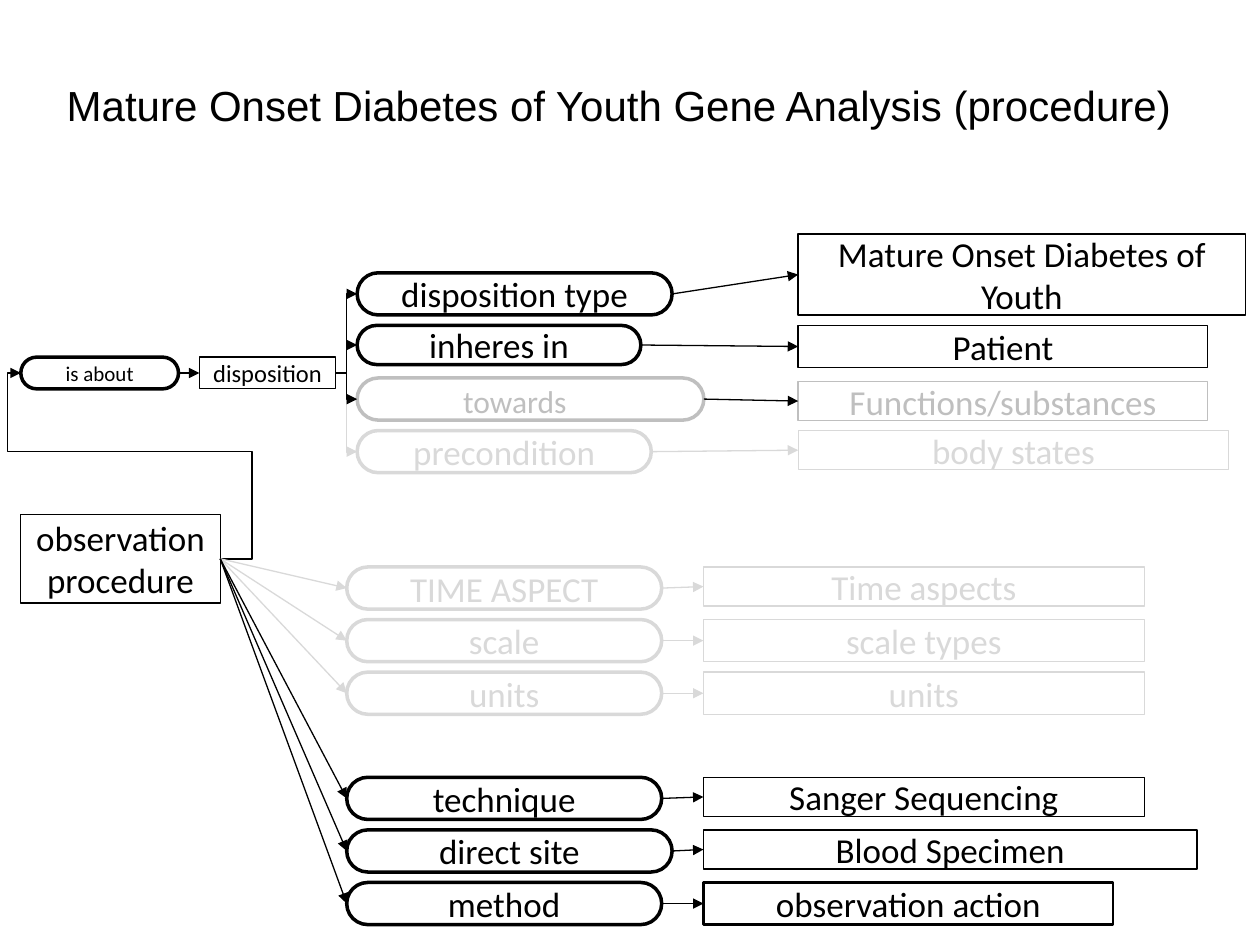
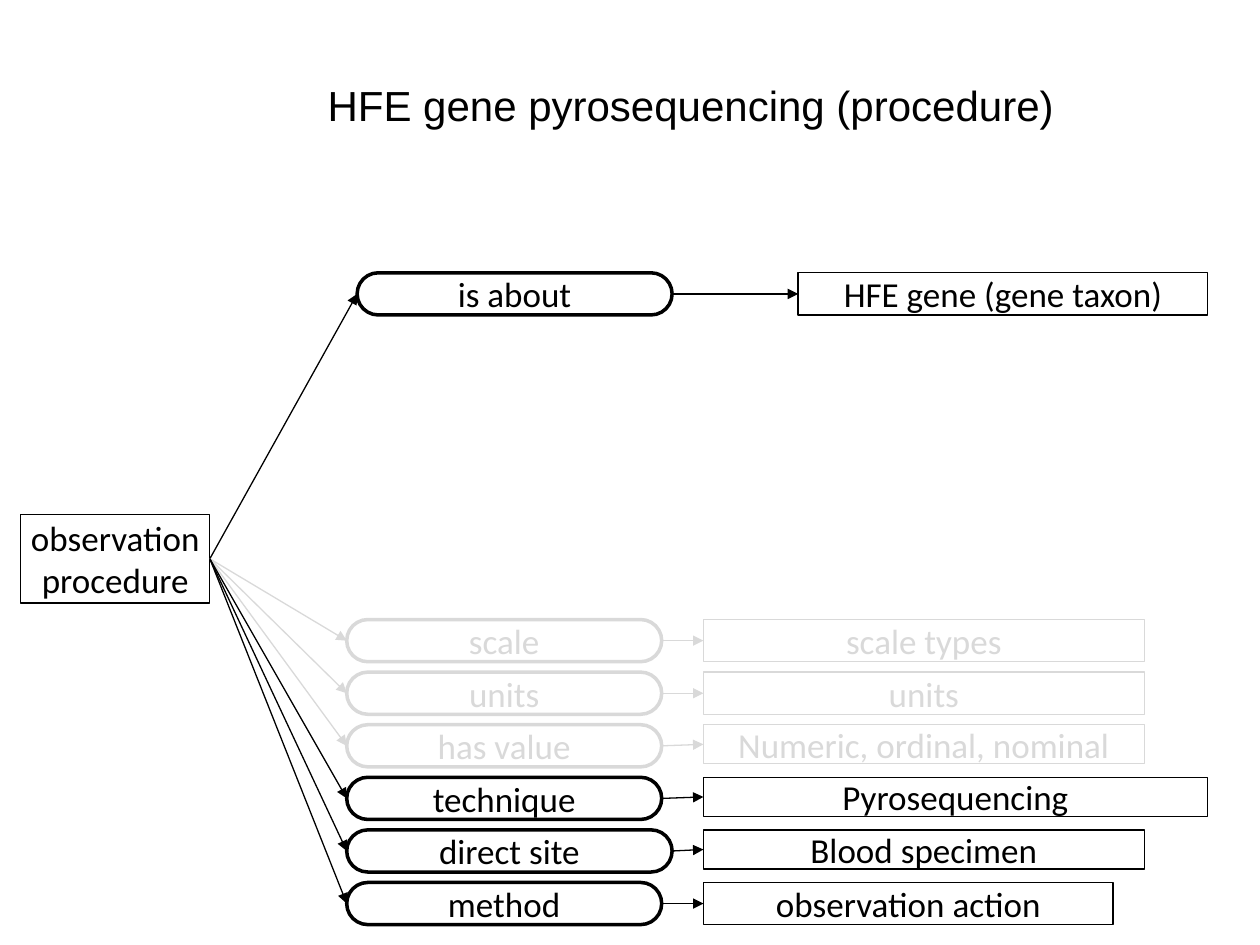
from collections import namedtuple

from lxml import etree
from pptx import Presentation, util as u
from pptx.dml.color import RGBColor
from pptx.enum import shapes, text
from pptx.oxml.ns import qn

THEME = {
    "tones": {"black": "000000", "grey": "BFBFBF", "pale": "D9D9D9"},
    "title": {"name": "Arial", "size": u.Pt(24)},
    "body": {"name": "Calibri", "size": u.Pt(20)},
    "line": {"box": 0.75, "pill": 2, "arrow": 0.75, "elbow": 1},
}
BOX = shapes.MSO_SHAPE.RECTANGLE
PILL = shapes.MSO_SHAPE.ROUNDED_RECTANGLE
BOX_MARGINS = {"margin_left": u.Cm(0.18), "margin_right": u.Cm(0.18),
               "margin_top": u.Cm(0.09), "margin_bottom": u.Cm(0.09)}
TOP, LEFT, BOTTOM, RIGHT = range(4)

# Rows: an attribute pill, then its value box
ROW_STEP = 1.06
TALL, LOW = 0.85, 0.79
UPPER = {"top": 5.5, "pill_left": 7.2, "box_left": 16.09}
LOWER = {"top": 11.43, "pill_left": 6.99, "box_left": 14.18}
Row = namedtuple("Row", "number label pill_width tone value box_width box_height "
                 "box_shift pill_height box_line arrow_tone",
                 defaults=(0, TALL, THEME["line"]["box"], None))

SCALE = Row(1, "scale", 6.35, "pale", "scale types", 8.89, TALL)
UNITS = Row(2, "units", 6.35, "pale", "units", 8.89, TALL)
METHOD = Row(6, "method", 6.35, "black", "observation action", 8.26, TALL)

SLIDES = [
    {
        "title": "Mature Onset Diabetes of Youth Gene Analysis (procedure)",
        "title_left": 1.09, "title_width": 23.24, "procedure_width": 4.02,
        "has_disposition": True,
        "upper": [
            Row(0, "disposition type", 6.35, "black",
                "Mature Onset Diabetes of Youth", 9.02, 1.63, box_shift=-0.78),
            Row(1, "inheres in", 5.72, "black", "Patient", 8.26, TALL, pill_height=LOW),
            Row(2, "", 6.99, "grey", "Functions/substances", 8.26, LOW,
                box_shift=0.07, arrow_tone="black"),
            Row(3, "precondition", 5.93, "pale", "body states", 8.68, LOW, box_line=0.25),
        ],
        "lower": [
            Row(0, "TIME ASPECT", 6.35, "pale", "Time aspects", 8.89, LOW),
            SCALE,
            UNITS,
            Row(4, "technique", 6.35, "black", "Sanger Sequencing", 8.89, LOW),
            Row(5, "direct site", 6.56, "black", "Blood Specimen", 9.95, LOW),
            METHOD._replace(box_line=1.5),
        ],
    },
    {
        "title": "HFE gene pyrosequencing (procedure)",
        "title_left": 6.35, "title_width": 15.4, "procedure_width": 3.81,
        "has_disposition": False,
        "upper": [
            Row(0, "is about", 6.35, "black", "HFE gene (gene taxon)", 8.26, TALL),
        ],
        "lower": [
            SCALE,
            UNITS,
            Row(3, "has value", 6.35, "pale", "Numeric, ordinal, nominal", 8.89, LOW),
            Row(4, "technique", 6.35, "black", "Pyrosequencing", 10.16, LOW),
            Row(5, "direct site", 6.56, "black", "Blood specimen", 8.89, LOW),
            METHOD,
        ],
    },
]


def add_box(slide, kind, place, words, tone, size=None, line=None):
    """Add an outlined box or pill; kind None gives a plain text box."""
    place = [u.Cm(length) for length in place]
    color = RGBColor.from_string(THEME["tones"][tone])
    if kind is None:
        shape = slide.shapes.add_textbox(*place)
    else:
        shape = slide.shapes.add_shape(kind, *place)
        shape.shadow.inherit = False
        shape.fill.background()
        shape.line.color.rgb = color
        shape.line.width = u.Pt(line or THEME["line"]["pill" if kind == PILL else "box"])
    if kind == PILL:
        shape.adjustments[0] = 0.5
    frame_format = {"word_wrap": True, "vertical_anchor": text.MSO_ANCHOR.MIDDLE}
    if kind != PILL:
        frame_format.update(BOX_MARGINS)
    for attribute, value in frame_format.items():
        setattr(shape.text_frame, attribute, value)
    if words:
        paragraph = shape.text_frame.paragraphs[0]
        paragraph.alignment = text.PP_ALIGN.CENTER
        run = paragraph.add_run()
        run.text = words
        for attribute, value in THEME["body"].items():
            setattr(run.font, attribute, value)
        if size:
            run.font.size = u.Pt(size)
        run.font.color.rgb = color
    return shape


def add_arrow(slide, start, end, tone, elbow=False, bends=()):
    """Join the right side of start to the left side of end."""
    kind = shapes.MSO_CONNECTOR.ELBOW if elbow else shapes.MSO_CONNECTOR.STRAIGHT
    connector = slide.shapes.add_connector(kind, 0, 0, 0, 0)
    connector.begin_connect(start, RIGHT)
    connector.end_connect(end, LEFT)
    connector.line.color.rgb = RGBColor.from_string(THEME["tones"][tone])
    connector.line.width = u.Pt(THEME["line"]["elbow" if elbow else "arrow"])
    properties = connector._element.spPr
    outline = properties.find(qn("a:ln"))
    etree.SubElement(outline, qn("a:tailEnd"), type="triangle")
    etree.SubElement(properties, qn("a:effectLst"))
    if bends:
        geometry = properties.find(qn("a:prstGeom"))
        geometry.set("prst", "bentConnector5")
        guides = geometry.find(qn("a:avLst"))
        if guides is None:
            guides = etree.SubElement(geometry, qn("a:avLst"))
        for number, bend in enumerate(bends, 1):
            etree.SubElement(guides, qn("a:gd"), name=f"adj{number}", fmla=f"val {bend}")


presentation = Presentation()
presentation.slide_width = u.Cm(25.4)
presentation.slide_height = u.Cm(19.05)

for content in SLIDES:
    slide = presentation.slides.add_slide(presentation.slide_layouts[5])

    # Title
    title = slide.shapes.title
    title_place = {"left": content["title_left"], "top": 1.48,
                   "width": content["title_width"], "height": 1.28}
    for attribute, value in title_place.items():
        setattr(title, attribute, u.Cm(value))
    title.text_frame.text = content["title"]
    title_format = {"word_wrap": True, "auto_size": text.MSO_AUTO_SIZE.NONE,
                    "vertical_anchor": text.MSO_ANCHOR.TOP}
    for attribute, value in title_format.items():
        setattr(title.text_frame, attribute, value)
    paragraph = title.text_frame.paragraphs[0]
    paragraph.alignment = text.PP_ALIGN.LEFT
    for attribute, value in THEME["title"].items():
        setattr(paragraph.runs[0].font, attribute, value)
    paragraph.runs[0].font.color.rgb = RGBColor.from_string(THEME["tones"]["black"])

    # Procedure, and the disposition it is about
    procedure = add_box(slide, BOX, (0.42, 10.37, content["procedure_width"], 1.79),
                        "observation procedure", "black")
    upper_source = procedure
    if content["has_disposition"]:
        is_about = add_box(slide, PILL, (0.42, 7.2, 3.18, 0.64), "is about", "black", 12)
        disposition = add_box(slide, BOX, (4.02, 7.2, 2.75, 0.64), "disposition", "black", 14)
        add_arrow(slide, procedure, is_about, "black", elbow=True,
                  bends=(-15800, 57700, 106600))
        add_arrow(slide, is_about, disposition, "black", elbow=True)
        upper_source = disposition

    # Attribute rows, last first so that black elbows cover pale ones
    upper_rows = [(UPPER, upper_source, row) for row in reversed(content["upper"])]
    lower_rows = [(LOWER, procedure, row) for row in content["lower"]]
    for group, source, row in upper_rows + lower_rows:
        top = group["top"] + row.number * ROW_STEP
        pill = add_box(slide, PILL, (group["pill_left"], top, row.pill_width, row.pill_height),
                       row.label, row.tone)
        box = add_box(slide, BOX, (group["box_left"], top + row.box_shift,
                                   row.box_width, row.box_height),
                      row.value, row.tone, line=row.box_line)
        arrow_tone = row.arrow_tone or row.tone
        add_arrow(slide, source, pill, arrow_tone, elbow=source is not procedure)
        add_arrow(slide, pill, box, arrow_tone)

    # Label set left of centre in its pill
    if content["has_disposition"]:
        add_box(slide, None, (9.07, 7.57, 2.62, 1.02), "towards", "grey", 18)

presentation.save("out.pptx")
